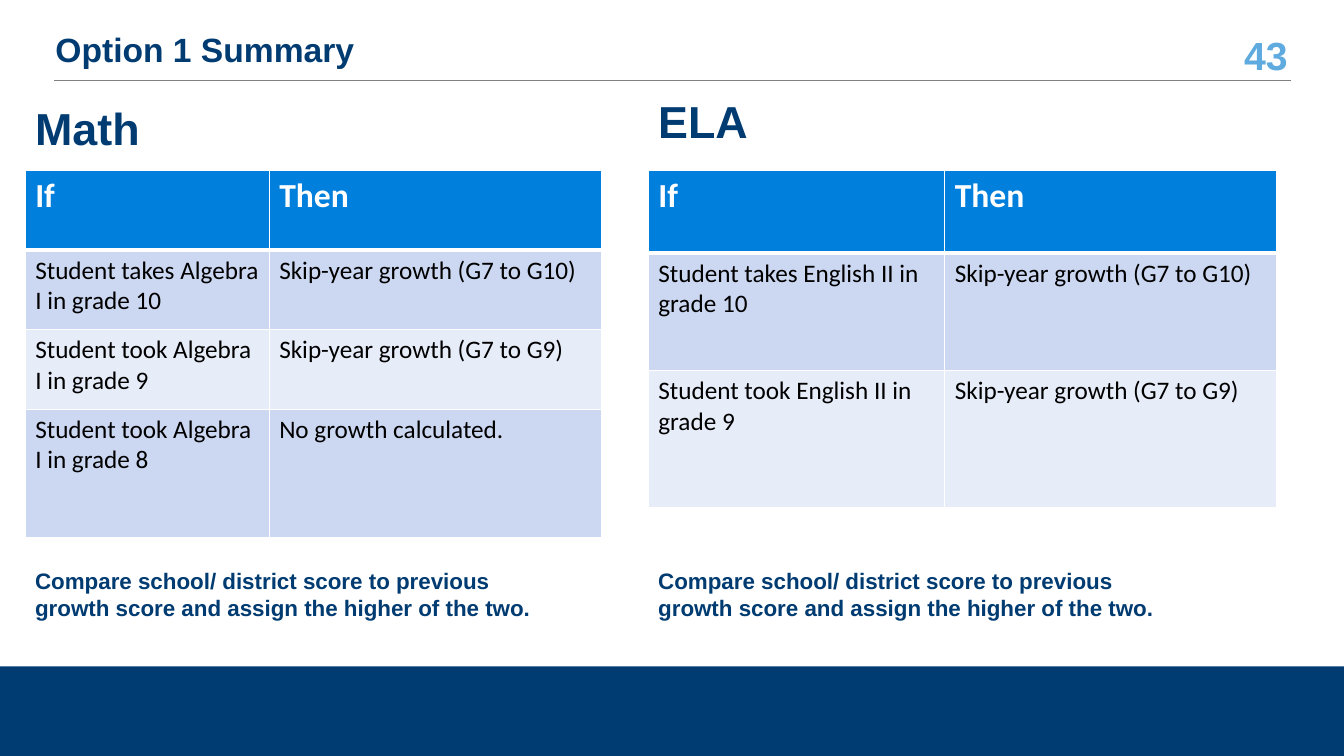
"""Build the Option 1 Summary slide with the Math and ELA growth tables."""
from lxml import etree
from pptx import Presentation
from pptx.dml.color import RGBColor
from pptx.enum import shapes, text
from pptx.oxml import ns
from pptx.util import Inches, Pt

COLORS = {"navy": "003B71", "sky": "5FAADE", "rule": "808080", "head": "007FDC",
          "band": "CCD8F2", "light": "E7ECF9", "white": "FFFFFF", "black": "000000"}
NOTE = "Compare school/ district score to previous growth score and assign the higher of the two."
SUBJECTS = [
    {"name": "Math", "left": 0.25, "top": 1.04, "cols": [2.42, 3.3],
     "heights": [0.79, 0.79, 0.79, 1.27],
     "rows": [("If", "Then"),
              ("Student takes Algebra I in grade 10", "Skip-year growth (G7 to G10)"),
              ("Student took Algebra I in grade 9", "Skip-year growth (G7 to G9)"),
              ("Student took Algebra I in grade 8", "No growth calculated.")]},
    {"name": "ELA", "left": 6.43, "top": 0.97, "cols": [2.94, 3.29],
     "heights": [0.82, 1.17, 1.36],
     "rows": [("If", "Then"),
              ("Student takes English II in grade 10", "Skip-year growth (G7 to G10)"),
              ("Student took English II in grade 9", "Skip-year growth (G7 to G9)")]},
]


def write(tf, words, size, color, font="Arial", bold=True, align=text.PP_ALIGN.LEFT):
    p = tf.paragraphs[0]
    p.alignment = align
    r = p.add_run()
    r.text = words
    r.font.name, r.font.size, r.font.bold = font, Pt(size), bold
    r.font.color.rgb = RGBColor.from_string(COLORS[color])
    return p


def add_text(box, words, size, color, align=text.PP_ALIGN.LEFT):
    sp = s.shapes.add_textbox(*map(Inches, box))
    tf = sp.text_frame
    tf.word_wrap = True
    tf.vertical_anchor = text.MSO_ANCHOR.MIDDLE
    write(tf, words, size, color, align=align)


prs = Presentation()
prs.slide_width, prs.slide_height = Inches(13.33), Inches(7.5)
s = prs.slides.add_slide(prs.slide_layouts[5])

footer = s.shapes.add_shape(shapes.MSO_SHAPE.RECTANGLE, 0, Inches(6.61), Inches(13.33), Inches(0.89))
footer.shadow.inherit = False
footer.fill.solid()
footer.fill.fore_color.rgb = RGBColor.from_string(COLORS["navy"])
footer.line.fill.background()

add_text((12.07, 0.33, 0.8, 0.42), "43", 28, "sky", text.PP_ALIGN.RIGHT)

rule = s.shapes.add_connector(shapes.MSO_CONNECTOR.STRAIGHT,
                              Inches(0.54), Inches(0.8), Inches(12.8), Inches(0.8))
rule.line.color.rgb = RGBColor.from_string(COLORS["rule"])
rule.line.width = Pt(0.5)
etree.SubElement(rule.element.spPr, ns.qn("a:effectLst"))

title = s.shapes.title
title.left, title.top, title.width, title.height = map(Inches, (0.45, 0.3, 11.6, 0.42))
title.text_frame.auto_size = text.MSO_AUTO_SIZE.NONE
title.text_frame.vertical_anchor = text.MSO_ANCHOR.MIDDLE
write(title.text_frame, "Option 1 Summary", 24, "navy").line_spacing = 0.9

for subject in SUBJECTS:
    left, cols, heights = subject["left"], subject["cols"], subject["heights"]
    frame = s.shapes.add_table(len(heights), len(cols), Inches(left), Inches(1.69),
                               Inches(sum(cols)), Inches(sum(heights)))
    table = frame.table
    for col, width in zip(table.columns, cols):
        col.width = Inches(width)
    for i, (height, words) in enumerate(zip(heights, subject["rows"])):
        table.rows[i].height = Inches(height)
        fill = "head" if i == 0 else "band" if i % 2 else "light"
        for j, label in enumerate(words):
            cell = table.cell(i, j)
            tcPr = cell._tc.get_or_add_tcPr()
            for side in "LRTB":
                thick = (i, side) in ((0, "B"), (1, "T"))
                ln = etree.SubElement(tcPr, ns.qn(f"a:ln{side}"), w=str(Pt(3 if thick else 1)))
                solid = etree.SubElement(ln, ns.qn("a:solidFill"))
                etree.SubElement(solid, ns.qn("a:srgbClr"), val=COLORS["white"])
            cell.fill.solid()
            cell.fill.fore_color.rgb = RGBColor.from_string(COLORS[fill])
            write(cell.text_frame, label, 18 if i else 24, "black" if i else "white",
                  "Calibri", i == 0)
    add_text((left, subject["top"], 3.08, 0.46), subject["name"], 32, "navy")
    add_text((left, 5.52, 5.47, 0.75), NOTE, 16, "navy")

prs.save("out.pptx")
